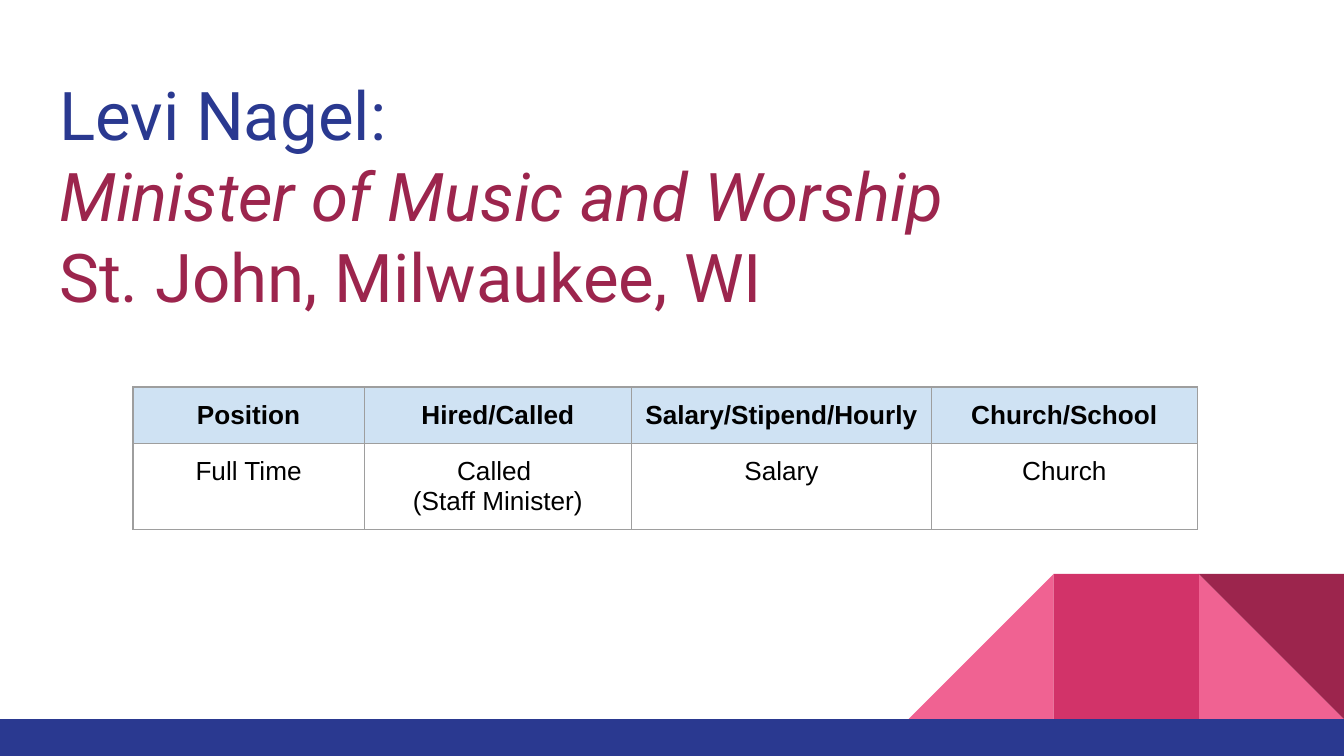
from dataclasses import dataclass

from lxml.etree import SubElement
from pptx import Presentation
from pptx.dml.color import RGBColor
from pptx.enum.shapes import MSO_SHAPE as SHAPE
from pptx.enum.text import MSO_ANCHOR, MSO_AUTO_SIZE, PP_ALIGN
from pptx.oxml.ns import qn
from pptx.util import Inches, Pt


@dataclass(frozen=True)
class Theme:
    navy: str = "2A3990"
    wine: str = "9C254D"
    rose: str = "D23369"
    pink: str = "F06292"
    header: str = "CFE2F3"
    border: str = "9E9E9E"
    text: str = "000000"
    title_font: str = "Roboto"
    table_font: str = "Arial"
    title_size: float = 36
    title_leading: float = 43.4
    table_size: float = 14
    border_width: float = 0.75


THEME = Theme()
MARGIN = Inches(0.1)


def style_run(r, font, size, color, bold=False, italic=False):
    r.font.name, r.font.size = font, Pt(size)
    r.font.color.rgb = RGBColor.from_string(color)
    r.font.bold, r.font.italic = bold, italic


def add_block(slide, shape, left, top, width, height, color, rotation=0):
    sp = slide.shapes.add_shape(
        shape, Inches(left), Inches(top), Inches(width), Inches(height))
    sp.shadow.inherit = False
    sp.fill.solid()
    sp.fill.fore_color.rgb = RGBColor.from_string(color)
    sp.line.fill.background()
    sp.rotation = rotation


def add_footer(slide, left, top, width, height, side=1.08):
    """Full-width band with a row of square tiles standing on its right end."""
    tiles = [  # column counted from the right edge
        (1, SHAPE.RIGHT_TRIANGLE, THEME.pink, 0),
        (3, SHAPE.RIGHT_TRIANGLE, THEME.pink, 270),
        (2, SHAPE.RECTANGLE, THEME.rose, 0),
        (1, SHAPE.RIGHT_TRIANGLE, THEME.wine, 180),
    ]
    for column, shape, color, rotation in tiles:
        add_block(slide, shape, left + width - column * side, top - side,
                  side, side, color, rotation)
    add_block(slide, SHAPE.RECTANGLE, left, top, width, height, THEME.navy)


def fill_title(slide, left, top, width, height, lines):
    title = slide.shapes.title
    title.left, title.top = Inches(left), Inches(top)
    title.width, title.height = Inches(width), Inches(height)
    tf = title.text_frame
    tf.text = "\n".join(text for text, _, _ in lines)
    tf.word_wrap, tf.auto_size = True, MSO_AUTO_SIZE.NONE
    tf.vertical_anchor = MSO_ANCHOR.TOP
    tf.margin_left = tf.margin_right = tf.margin_top = tf.margin_bottom = MARGIN
    for p, (_, color, italic) in zip(tf.paragraphs, lines):
        p.alignment = PP_ALIGN.LEFT
        p.line_spacing = Pt(THEME.title_leading)
        p.space_before = p.space_after = Pt(0)
        style_run(p.runs[0], THEME.title_font, THEME.title_size, color,
                  italic=italic)


def set_borders(cell):
    tc_pr = cell._tc.get_or_add_tcPr()
    for index, side in enumerate(("lnL", "lnR", "lnT", "lnB")):
        ln = tc_pr.makeelement(qn(f"a:{side}"),
                               {"w": str(Pt(THEME.border_width))})
        fill = SubElement(ln, qn("a:solidFill"))
        SubElement(fill, qn("a:srgbClr"), val=THEME.border)
        tc_pr.insert(index, ln)


def format_cell(cell, text, is_header):
    cell.text = text
    cell.margin_left = cell.margin_right = MARGIN
    cell.margin_top = cell.margin_bottom = MARGIN
    cell.vertical_anchor = MSO_ANCHOR.TOP
    if is_header:
        cell.fill.solid()
        cell.fill.fore_color.rgb = RGBColor.from_string(THEME.header)
    else:
        cell.fill.background()
    for p in cell.text_frame.paragraphs:
        p.alignment = PP_ALIGN.CENTER
        for r in p.runs:
            style_run(r, THEME.table_font, THEME.table_size, THEME.text,
                      bold=is_header)
    set_borders(cell)


def add_position_table(slide, left, top, widths, heights, rows):
    table = slide.shapes.add_table(
        len(rows), len(widths), Inches(left), Inches(top),
        Inches(sum(widths)), Inches(sum(heights))).table
    table.first_row = table.horz_banding = False
    for column, width in zip(table.columns, widths):
        column.width = Inches(width)
    for i, (row, height) in enumerate(zip(rows, heights)):
        table.rows[i].height = Inches(height)
        for j, text in enumerate(row):
            format_cell(table.cell(i, j), text, is_header=i == 0)


def main():
    prs = Presentation()
    prs.slide_width = Inches(10)
    prs.slide_height = prs.slide_width * 9 // 16
    slide = prs.slides.add_slide(prs.slide_layouts[5])
    add_footer(slide, 0, 5.35, 10, 0.28)
    add_position_table(
        slide, 0.99, 2.88, [1.72, 1.99, 2.23, 1.98], [0.42, 0.63],
        [["Position", "Hired/Called", "Salary/Stipend/Hourly", "Church/School"],
         ["Full Time", "Called \n(Staff Minister)", "Salary", "Church"]])
    fill_title(slide, 0.34, 0.44, 9.32, 0.66, [
        ("Levi Nagel:", THEME.navy, False),
        ("Minister of Music and Worship", THEME.wine, True),
        ("St. John, Milwaukee, WI", THEME.wine, False),
    ])
    prs.save("out.pptx")


if __name__ == "__main__":
    main()
